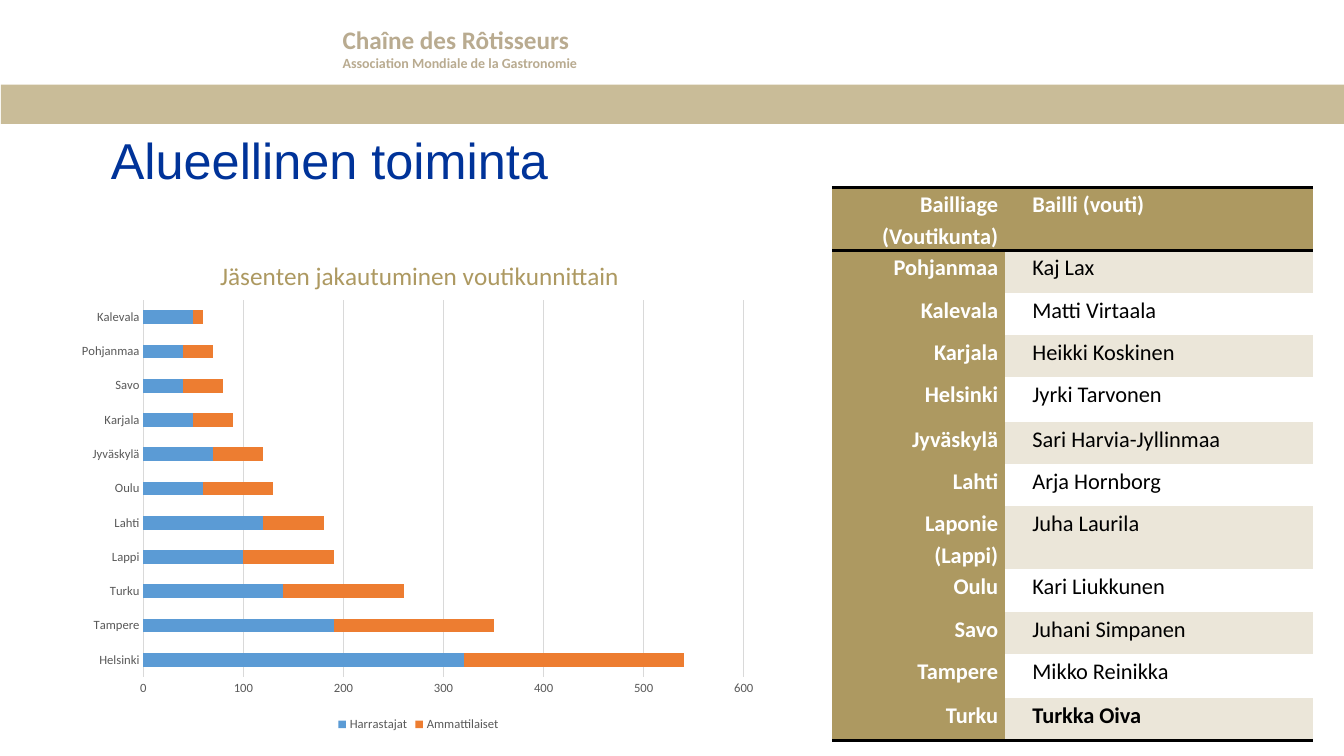
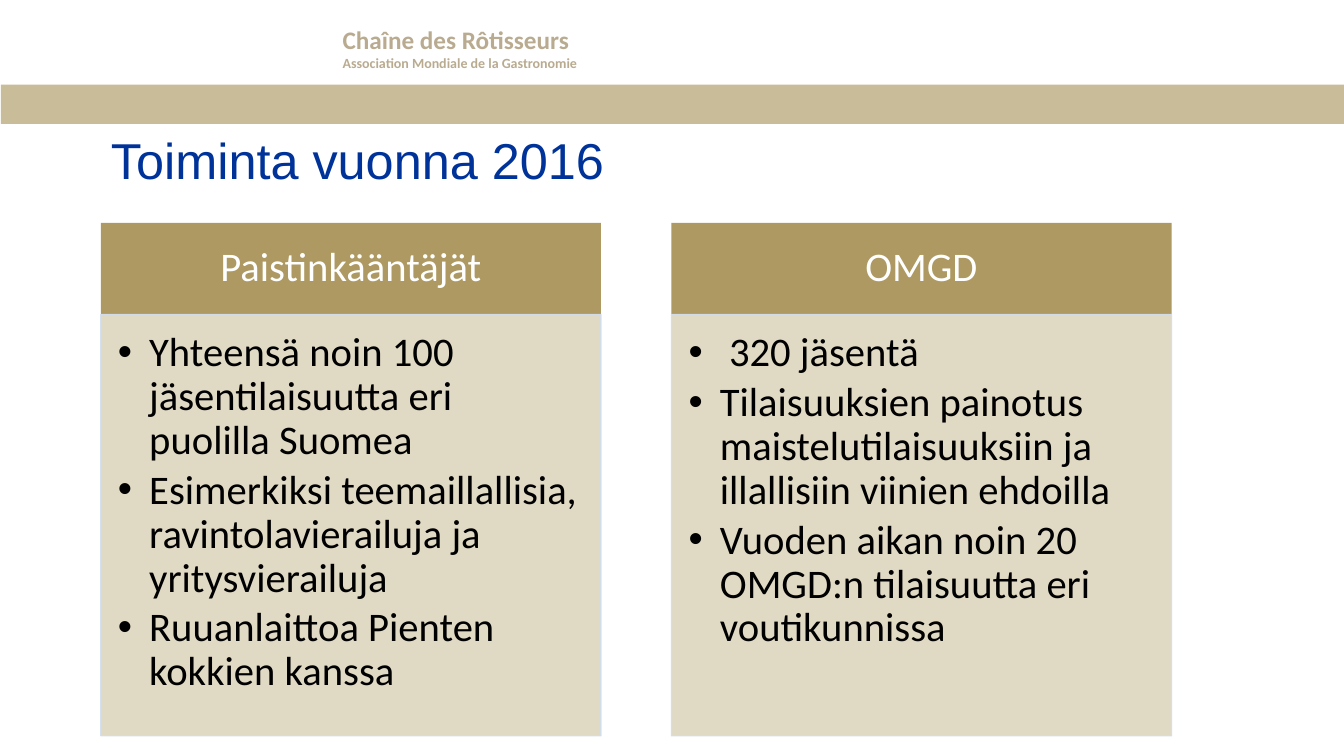
from pptx import Presentation
from pptx.chart.data import CategoryChartData
from pptx.dml.color import RGBColor
from pptx.enum.chart import XL_CHART_TYPE as ChartType, XL_LEGEND_POSITION as LegendPosition
from pptx.enum.chart import XL_TICK_MARK as TickMark
from pptx.enum.shapes import MSO_SHAPE as Shape
from pptx.enum.text import MSO_ANCHOR as Anchor, MSO_AUTO_SIZE as AutoSize, PP_ALIGN as Align
from pptx.oxml import parse_xml
from pptx.oxml.ns import nsdecls, qn
from pptx.oxml.xmlchemy import OxmlElement
from pptx.util import Inches, Pt

WIDTH, HEIGHT = 13.33, 7.5
LEFT, COLUMN, GUTTER = 1, 4.96, 0.7
HEAD_TOP, HEAD_HEIGHT, LIST_HEIGHT = 2.21, 0.91, 4.18
TITLE_ONLY, COMPARISON = 5, 4

GOLD, PALE_GOLD, HEADER_GOLD = "AD9961", "EBE6D9", "B9AB90"
NAVY, BLACK, WHITE = "003399", "000000", "FFFFFF"
GREY, GRID_GREY, EDGE_BLUE = "595959", "D9D9D9", "D2DEEF"
PLAIN_TABLE = "{2D5ABB26-0587-4C30-8999-92F81FD0307C}"

MEMBERS = {
    "Helsinki": (320, 220), "Tampere": (190, 160), "Turku": (140, 120),
    "Lappi": (100, 90), "Lahti": (120, 60), "Oulu": (60, 70),
    "Jyväskylä": (70, 50), "Karjala": (50, 40), "Savo": (40, 40),
    "Pohjanmaa": (40, 30), "Kalevala": (50, 10),
}
SERIES = (("Harrastajat", "5B9BD5"), ("Ammattilaiset", "ED7D31"))

BAILLIAGES = [
    ("Bailliage (Voutikunta)", "Bailli (vouti)"),
    ("Pohjanmaa", "Kaj Lax"),
    ("Kalevala", "Matti Virtaala"),
    ("Karjala", "Heikki Koskinen"),
    ("Helsinki", "Jyrki Tarvonen"),
    ("Jyväskylä", "Sari Harvia-Jyllinmaa"),
    ("Lahti", "Arja Hornborg"),
    ("Laponie (Lappi)", "Juha Laurila"),
    ("Oulu", "Kari Liukkunen"),
    ("Savo", "Juhani Simpanen"),
    ("Tampere", "Mikko Reinikka"),
    ("Turku", "Turkka Oiva"),
]
ROW_HEIGHT, TALLER_ROWS = 0.42, {0: 0.47, 4: 0.44, 10: 0.44}

ACTIVITIES = [
    ("Paistinkääntäjät", [
        "Yhteensä noin 100 jäsentilaisuutta eri puolilla Suomea",
        "Esimerkiksi teemaillallisia, ravintolavierailuja ja yritysvierailuja",
        "Ruuanlaittoa Pienten kokkien kanssa",
    ]),
    ("OMGD", [
        " 320 jäsentä",
        "Tilaisuuksien painotus maistelutilaisuuksiin ja illallisiin viinien ehdoilla",
        "Vuoden aikan noin 20 OMGD:n tilaisuutta eri voutikunnissa",
    ]),
]


def rgb(value):
    return RGBColor.from_string(value)


def set_font(font, size, color, name="Calibri", bold=False):
    font.size, font.name, font.bold = Pt(size), name, bold
    font.color.rgb = rgb(color)


def write(frame, text, align=Align.LEFT, spacing=1.0, after=0, margin=0, hanging=0,
          bullet=None, **font):
    """Put one paragraph after whatever the frame already holds."""
    para = frame.add_paragraph() if frame.text else frame.paragraphs[0]
    para.alignment, para.line_spacing = align, spacing
    para.space_before, para.space_after = Pt(0), Pt(after)
    props = para._p.get_or_add_pPr()
    props.set("marL", str(Inches(margin)))
    props.set("indent", str(Inches(-hanging)))
    if bullet:
        mark = OxmlElement("a:buChar")
        mark.set("char", bullet)
        props.append(mark)
    span = para.add_run()
    span.text = text
    set_font(span.font, **font)


def set_insets(holder, left, top, right, bottom):
    holder.margin_left, holder.margin_top = Inches(left), Inches(top)
    holder.margin_right, holder.margin_bottom = Inches(right), Inches(bottom)


def place(shape, left, top, width, height):
    shape.left, shape.top = Inches(left), Inches(top)
    shape.width, shape.height = Inches(width), Inches(height)


def fill_solid(holder, color):
    holder.fill.solid()
    holder.fill.fore_color.rgb = rgb(color)


def set_opacity(parent, percent):
    """Set the opacity of the solid fill right under a shape's or line's properties."""
    alpha = OxmlElement("a:alpha")
    alpha.set("val", str(percent * 1000))
    parent.find(f"{qn('a:solidFill')}/{qn('a:srgbClr')}").append(alpha)


def move_to_master(deck, shapes):
    """Move shapes behind the placeholders of the slide master."""
    tree = deck.slide_master.shapes.element
    for offset, shape in enumerate(shapes):
        shape.element.nvSpPr.cNvPr.set("id", str(100 + offset))
        tree.insert(2 + offset, shape.element)


def add_letterhead(deck, slide):
    band = slide.shapes.add_shape(Shape.RECTANGLE, 0, 0, 0, 0)
    place(band, 0.01, 0.84, WIDTH - 0.01, 0.39)
    band.shadow.inherit = False
    fill_solid(band, GOLD)
    set_opacity(band.element.spPr, 65)
    band.line.fill.background()

    letterhead = slide.shapes.add_textbox(0, 0, 0, 0)
    place(letterhead, 3.3, 0.19, WIDTH / 2, 0.57)
    frame = letterhead.text_frame
    frame.word_wrap, frame.auto_size = True, AutoSize.SHAPE_TO_FIT_TEXT
    for text, size in (("Chaîne des Rôtisseurs", 18),
                       ("Association Mondiale de la Gastronomie", 10)):
        write(frame, text, size=size, color=HEADER_GOLD, bold=True)
    move_to_master(deck, [band, letterhead])


def add_titled_slide(deck, layout, text):
    slide = deck.slides.add_slide(deck.slide_layouts[layout])
    title = slide.shapes.title
    place(title, LEFT, 1.3, 11.5, 0.87)
    title.text_frame.vertical_anchor = Anchor.TOP
    title.text_frame.auto_size = AutoSize.NONE
    write(title.text_frame, text, spacing=0.9, size=36, color=NAVY, name="Arial")
    return slide


def set_layout(parent, target=None, **shares):
    """Fix a chart part's place, in shares of the chart's size."""
    old = parent.find(qn("c:layout"))
    position = 0 if old is None else parent.index(old)
    if old is not None:
        parent.remove(old)
    inner = f'<c:layoutTarget val="{target}"/>' if target else ""
    inner += "".join(f'<c:{side}Mode val="edge"/>' for side in "xy")
    inner += "".join(f'<c:{side} val="{share}"/>' for side, share in shares.items())
    parent.insert(position, parse_xml(
        f'<c:layout {nsdecls("c")}><c:manualLayout>{inner}</c:manualLayout></c:layout>'))


def style_axis(axis):
    axis.major_tick_mark = axis.minor_tick_mark = TickMark.NONE
    axis.format.line.fill.background()
    set_font(axis.tick_labels.font, 9, GREY)


def add_member_chart(slide):
    data = CategoryChartData()
    data.categories = list(MEMBERS)
    for (name, _), values in zip(SERIES, zip(*MEMBERS.values())):
        data.add_series(name, values)
    area = [Inches(length) for length in (0.68, 2.32, 6.94, 4.98)]
    chart = slide.shapes.add_chart(ChartType.BAR_STACKED, *area, data).chart
    set_font(chart.font, 10, BLACK)

    chart.has_title = True
    write(chart.chart_title.text_frame, "Jäsenten jakautuminen voutikunnittain",
          align=Align.CENTER, size=18, color=GOLD)
    set_layout(chart.chart_title.element, x=0.21, y=0.04)
    set_layout(chart.element.find(f".//{qn('c:plotArea')}"), "inner",
               x=0.107, y=0.132, w=0.858, h=0.751)

    chart.has_legend = True
    chart.legend.position = LegendPosition.BOTTOM
    chart.legend.include_in_layout = False
    set_font(chart.legend.font, 9, GREY)

    style_axis(chart.category_axis)
    values = chart.value_axis
    style_axis(values)
    values.minimum_scale, values.maximum_scale, values.major_unit = 0, 600, 100
    values.major_gridlines.format.line.color.rgb = rgb(GRID_GREY)
    values.major_gridlines.format.line.width = Pt(0.75)

    plot = chart.plots[0]
    plot.gap_width, plot.overlap, plot.vary_by_categories = 150, 100, False
    for series, (_, color) in zip(plot.series, SERIES):
        fill_solid(series.format, color)


def add_border(cell, side):
    cell._tc.get_or_add_tcPr().insert(0, parse_xml(
        f'<a:ln{side} {nsdecls("a")} w="{Pt(2)}"><a:solidFill>'
        f'<a:srgbClr val="{BLACK}"/></a:solidFill></a:ln{side}>'))


def add_bailliage_table(slide):
    last = len(BAILLIAGES) - 1
    heights = [TALLER_ROWS.get(index, ROW_HEIGHT) for index in range(last + 1)]
    widths = (1.72, 3.05)
    frame = slide.shapes.add_table(
        last + 1, 2, Inches(8.25), Inches(1.86), Inches(sum(widths)), Inches(sum(heights)))
    frame.element.find(f".//{qn('a:tableStyleId')}").text = PLAIN_TABLE
    table = frame.table
    table.first_row = table.horz_banding = False
    for column, width in zip(table.columns, widths):
        column.width = Inches(width)
    for row, (height, texts) in enumerate(zip(heights, BAILLIAGES)):
        table.rows[row].height = Inches(height)
        for column, text in enumerate(texts):
            cell = table.cell(row, column)
            heading = row == 0 or column == 0
            set_insets(cell, 0.07, 0, 0.07, 0)
            fill_solid(cell, GOLD if heading else PALE_GOLD if row % 2 else WHITE)
            write(cell.text_frame, text, align=Align.LEFT if column else Align.RIGHT,
                  spacing=1.15, after=6, margin=0.2, size=16,
                  color=WHITE if heading else BLACK, bold=heading or row == last)
            if row in (0, last):
                add_border(cell, "B")
            if row == 0:
                add_border(cell, "T")


def prepare_panel(panel, top, height, column, insets, anchor):
    place(panel, LEFT + column * (COLUMN + GUTTER), top, COLUMN, height)
    fill_solid(panel, GOLD)
    frame = panel.text_frame
    frame.auto_size, frame.vertical_anchor = AutoSize.NONE, anchor
    set_insets(frame, *insets)
    return frame


def fill_activity_column(slide, column, heading, items):
    head, body = (slide.placeholders[1 + 2 * column + part] for part in range(2))
    frame = prepare_panel(head, HEAD_TOP, HEAD_HEIGHT, column,
                          (0.23, 0.13, 0.23, 0.13), Anchor.MIDDLE)
    write(frame, heading, align=Align.CENTER, spacing=0.9, size=29, color=WHITE)

    frame = prepare_panel(body, HEAD_TOP + HEAD_HEIGHT, LIST_HEIGHT, column,
                          (0.17, 0.17, 0.23, 0.25), Anchor.TOP)
    set_opacity(body.element.spPr, 37)
    body.line.color.rgb = rgb(EDGE_BLUE)
    body.line.width = Pt(1)
    set_opacity(body.element.spPr.find(qn("a:ln")), 90)
    for item in items:
        write(frame, item, spacing=0.9, after=4.35, margin=0.31, hanging=0.31,
              bullet="•", size=29, color=BLACK)


def main():
    deck = Presentation()
    deck.slide_width, deck.slide_height = Inches(WIDTH), Inches(HEIGHT)

    regions = add_titled_slide(deck, TITLE_ONLY, "Alueellinen toiminta")
    add_letterhead(deck, regions)
    add_member_chart(regions)
    add_bailliage_table(regions)

    year = add_titled_slide(deck, COMPARISON, "Toiminta vuonna 2016")
    for column, (heading, items) in enumerate(ACTIVITIES):
        fill_activity_column(year, column, heading, items)

    deck.save("out.pptx")


if __name__ == "__main__":
    main()
